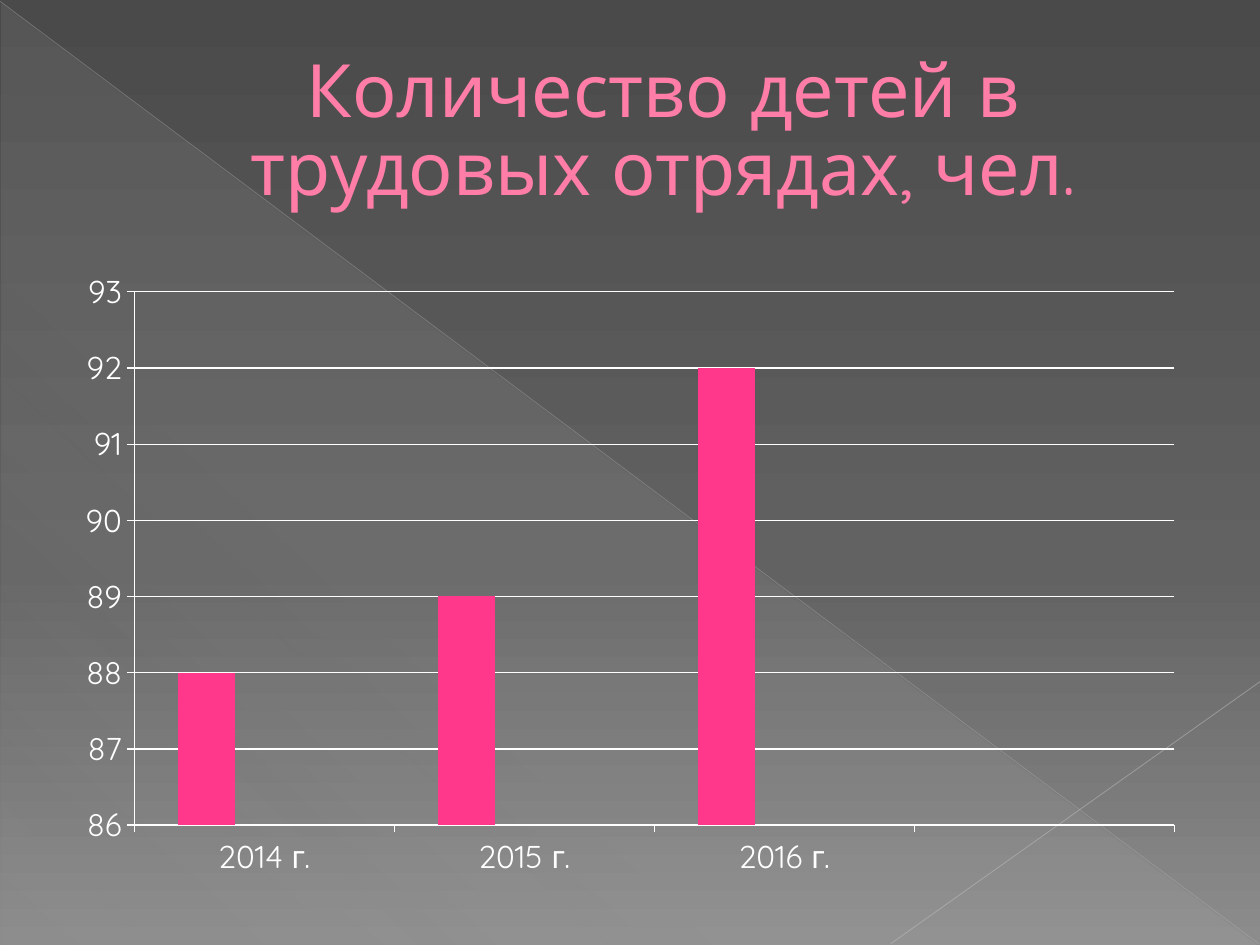
from lxml.etree import SubElement
from pptx import Presentation
from pptx.chart.data import CategoryChartData
from pptx.dml.color import RGBColor
from pptx.enum.chart import XL_CHART_TYPE as ChartType, XL_TICK_MARK as Tick
from pptx.enum.shapes import MSO_CONNECTOR as Connector, MSO_SHAPE as Shape
from pptx.enum.text import MSO_ANCHOR as Anchor, PP_ALIGN as Align
from pptx.oxml.ns import qn
from pptx.util import Inches, Pt

FONT = "Quicksand"
WHITE = "FFFFFF"


def rgb(value):
    return RGBColor.from_string(value)


def add_text(slide, text, box, *, size, color, outline, indent, spacing):
    """Add centred text with an outline colour and a left margin."""
    frame = slide.shapes.add_textbox(*map(Inches, box)).text_frame
    frame.word_wrap = True
    frame.vertical_anchor = Anchor.MIDDLE
    paragraph = frame.paragraphs[0]
    paragraph.alignment = Align.CENTER
    paragraph.line_spacing = spacing
    properties = paragraph._p.get_or_add_pPr()
    properties.set("marL", str(Inches(indent)))
    properties.set("indent", "0")
    run = paragraph.add_run()
    run.text = text
    # The outline must come first among the run properties
    edge = SubElement(run._r.get_or_add_rPr(), qn("a:ln"), w=str(Pt(0.5)))
    edge_fill = SubElement(edge, qn("a:solidFill"))
    SubElement(edge_fill, qn("a:srgbClr"), val=outline)
    run.font.name = FONT
    run.font.size = Pt(size)
    run.font.color.rgb = rgb(color)


prs = Presentation()
prs.slide_width, prs.slide_height = Inches(10), Inches(7.5)
slide = prs.slides.add_slide(prs.slide_layouts[6])

# Background and translucent triangle
slide.background.fill.gradient()
triangle = slide.shapes.add_shape(
    Shape.RIGHT_TRIANGLE, Inches(0.01), Inches(0.02), Inches(9.98), Inches(7.48))
triangle.shadow.inherit = False
triangle.line.fill.background()
triangle.fill.gradient()

gradients = [
    (slide, 90, [(0, "4A4A4A", 100), (60, "626262", 100), (100, "8C8C8C", 100)]),
    (triangle, 133, [(0, "D2D2D2", 10), (70, "D2D2D2", 8), (100, "D2D2D2", 1)]),
]
for owner, angle, stops in gradients:
    gradient = owner.element.find(".//" + qn("a:gradFill"))
    gradient.find(qn("a:lin")).set("ang", str(angle * 60000))
    stop_list = gradient.find(qn("a:gsLst"))
    stop_list.clear()
    for position, color, opacity in stops:
        stop = SubElement(stop_list, qn("a:gs"), pos=str(position * 1000))
        tone = SubElement(stop, qn("a:srgbClr"), val=color)
        if opacity < 100:
            SubElement(tone, qn("a:alpha"), val=str(opacity * 1000))

# Thin diagonals
diagonals = [
    ((0, 0.01, 9.99, 7.49), "BFBFBF", 0.39, 35),
    ((10, 5.41, 7.07, 7.49), "C6C6C6", 0.47, 45),
]
for ends, color, width, opacity in diagonals:
    diagonal = slide.shapes.add_connector(Connector.STRAIGHT, *map(Inches, ends))
    diagonal.line.color.rgb = rgb(color)
    diagonal.line.width = Pt(width)
    properties = diagonal._element.spPr
    tone = properties.find(".//" + qn("a:srgbClr"))
    SubElement(tone, qn("a:alpha"), val=str(opacity * 1000))
    SubElement(properties, qn("a:effectLst"))

add_text(slide, "Количество детей в трудовых отрядах, чел.", (0.5, 0.29, 9, 1.53),
         size=42, color="FF7DA7", outline="B12761", indent=0.53, spacing=0.88)

# Children per year; the fourth category and two series are empty
children = CategoryChartData()
children.categories = ["2014 г.", "2015 г.", "2016 г.", ""]
children.add_series("Series 1", [88, 89, 92, None])
children.add_series("Series 2", [None] * 4)
children.add_series("Series 3", [None] * 4)
chart = slide.shapes.add_chart(
    ChartType.COLUMN_CLUSTERED, Inches(0.5), Inches(2.06), Inches(9), Inches(5),
    children).chart
chart.has_title = False
chart.has_legend = False
chart.font.name = FONT
chart.font.size = Pt(18)
chart.font.color.rgb = rgb(WHITE)

columns = chart.plots[0]
columns.gap_width = 150
columns.overlap = 0
columns.vary_by_categories = False
for series, color in zip(columns.series, ["FF388C", "E40059", "9C007F"]):
    series.format.fill.solid()
    series.format.fill.fore_color.rgb = rgb(color)

years, counts = chart.category_axis, chart.value_axis
counts.minimum_scale, counts.maximum_scale, counts.major_unit = 86, 93, 1
counts.has_major_gridlines = True
for axis in (years, counts):
    axis.major_tick_mark = Tick.OUTSIDE
    axis.minor_tick_mark = Tick.NONE
for part in (years, counts, counts.major_gridlines):
    part.format.line.color.rgb = rgb(WHITE)
    part.format.line.width = Pt(0.75)

prs.save("out.pptx")
